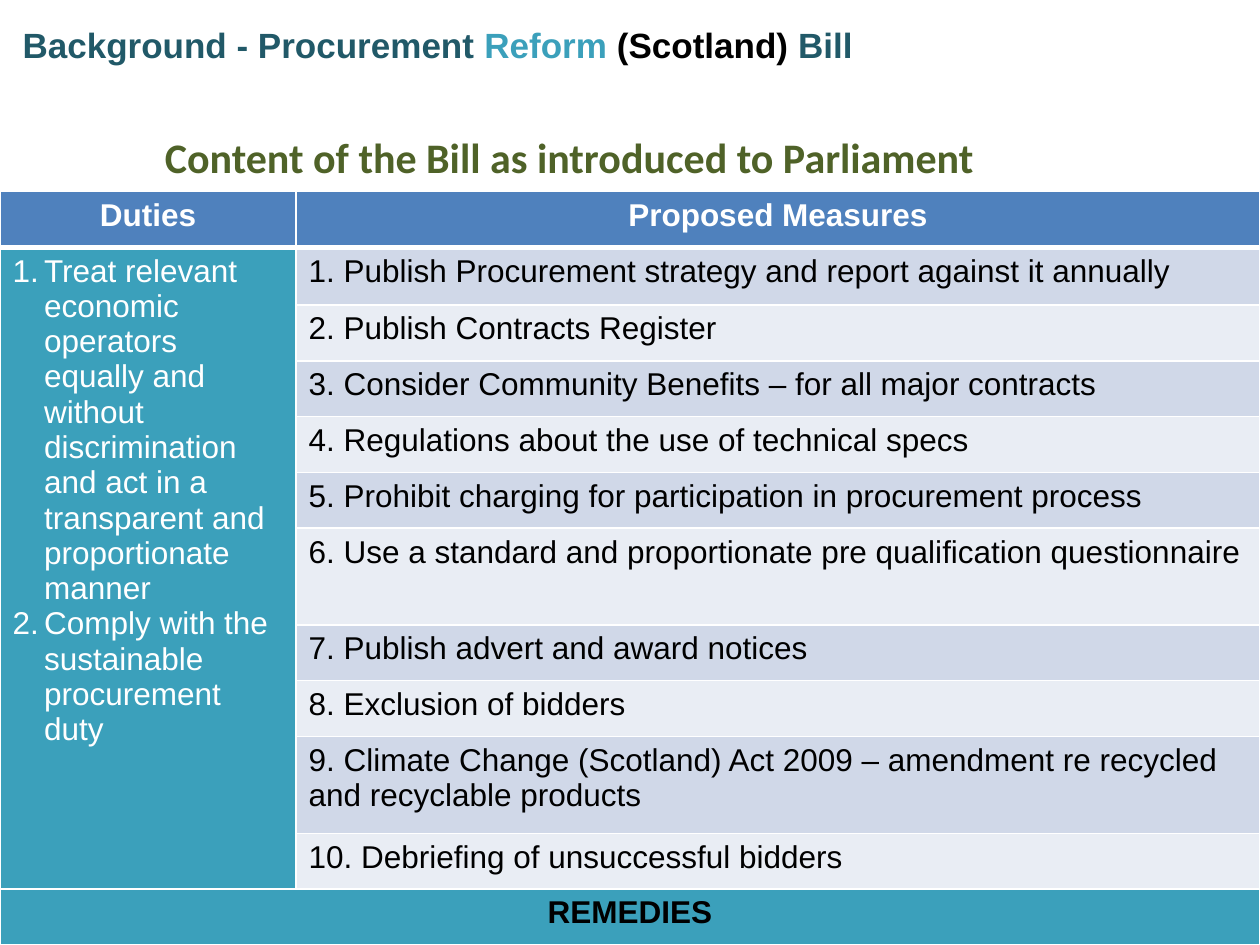
import pptx
import pptx.dml.color
import pptx.enum.text
import pptx.util
from lxml import etree

Pt = pptx.util.Pt
ALIGN = pptx.enum.text.PP_ALIGN
MIDDLE = pptx.enum.text.MSO_ANCHOR.MIDDLE
NS = "{http://schemas.openxmlformats.org/drawingml/2006/main}"

BLACK, WHITE, TEAL, DARK_TEAL = "000000", "FFFFFF", "3BA0BB", "215968"
HEADER_BLUE, BANDS = "4F81BD", ("D0D8E8", "E9EDF4")

HEADING = [
    ("Background - Procurement ", DARK_TEAL),
    ("Reform ", TEAL),
    ("(Scotland) ", BLACK),
    ("Bill", DARK_TEAL),
]
SUBJECT = "Content of the Bill as introduced to Parliament"
COLUMN_HEADS = ["Duties", "Proposed Measures"]
DUTIES = [
    "Treat relevant economic operators equally and without discrimination "
    "and act in a transparent and proportionate manner",
    "Comply with the sustainable procurement duty",
]
MEASURES = [
    "Publish Procurement strategy and report against it annually",
    "Publish Contracts Register",
    "Consider Community Benefits – for all major contracts",
    "Regulations about the use of technical specs",
    "Prohibit charging for participation in procurement process",
    "Use a standard and proportionate pre qualification questionnaire",
    "Publish advert and award notices",
    "Exclusion of bidders",
    "Climate Change (Scotland) Act 2009 – amendment re recycled and recyclable products",
    "Debriefing of unsuccessful bidders",
]
REMEDIES = "REMEDIES"

COLUMN_WIDTHS = (169.2, 550.8)
ROW_HEIGHT, FIRST_HEIGHT, TALL_HEIGHT = 31.9, 33, 55.3
TALL_MEASURES = (6, 9)


def rgb(color):
    return pptx.dml.color.RGBColor.from_string(color)


def write(paragraph, text, size=18, font="Arial", color=BLACK, bold=False, align=ALIGN.LEFT):
    paragraph.alignment = align
    run = paragraph.add_run()
    run.text = text
    run.font.size = Pt(size)
    run.font.name = font
    run.font.bold = bold
    run.font.color.rgb = rgb(color)


def number(paragraph):
    properties = paragraph._p.get_or_add_pPr()
    properties.set("marL", str(Pt(18)))
    properties.set("indent", str(-Pt(18)))
    etree.SubElement(properties, NS + "buFont", typeface="+mj-lt")
    etree.SubElement(properties, NS + "buAutoNum", type="arabicPeriod")


def style_cell(cell, color, bottom=1):
    properties = cell._tc.get_or_add_tcPr()
    for side, width in (("L", 1), ("R", 1), ("T", 1), ("B", bottom)):
        line = etree.SubElement(properties, NS + "ln" + side, w=str(Pt(width)))
        fill = etree.SubElement(line, NS + "solidFill")
        etree.SubElement(fill, NS + "srgbClr", val=WHITE)
    cell.fill.solid()
    cell.fill.fore_color.rgb = rgb(color)


def place(shape, left, top, width, height):
    shape.left, shape.top, shape.width, shape.height = map(Pt, (left, top, width, height))


def add_titles(slide):
    subject = slide.shapes.title
    place(subject, 1.4, 44.6, 648, 90)
    subject.text_frame.vertical_anchor = MIDDLE
    write(subject.text_frame.paragraphs[0], SUBJECT, size=24, font="Calibri",
          color="4F6228", bold=True, align=ALIGN.CENTER)

    heading = slide.shapes.add_textbox(Pt(5.8), Pt(5.8), Pt(655), Pt(39.6)).text_frame
    heading.word_wrap = True
    heading.vertical_anchor = MIDDLE
    for text, color in HEADING:
        write(heading.paragraphs[0], text, size=20, color=color, bold=True)


def add_measures_table(slide):
    heights = [ROW_HEIGHT] * (len(MEASURES) + 2)
    heights[1] = FIRST_HEIGHT
    for measure in TALL_MEASURES:
        heights[measure] = TALL_HEIGHT
    table = slide.shapes.add_table(
        len(heights), 2, Pt(0), Pt(109.4), Pt(sum(COLUMN_WIDTHS)), Pt(sum(heights))
    ).table
    for column, width in zip(table.columns, COLUMN_WIDTHS):
        column.width = Pt(width)
    for row, height in zip(table.rows, heights):
        row.height = Pt(height)

    last = len(heights) - 1
    table.cell(1, 0).merge(table.cell(last - 1, 0))
    table.cell(last, 0).merge(table.cell(last, 1))

    for column, text in enumerate(COLUMN_HEADS):
        cell = table.cell(0, column)
        style_cell(cell, HEADER_BLUE, bottom=3)
        write(cell.text_frame.paragraphs[0], text, color=WHITE, bold=True, align=ALIGN.CENTER)

    for row, text in enumerate(MEASURES, start=1):
        style_cell(table.cell(row, 0), TEAL)
        cell = table.cell(row, 1)
        style_cell(cell, BANDS[(row - 1) % 2])
        write(cell.text_frame.paragraphs[0], f"{row}. {text}")

    duties = table.cell(1, 0).text_frame
    for index, text in enumerate(DUTIES):
        paragraph = duties.add_paragraph() if index else duties.paragraphs[0]
        number(paragraph)
        write(paragraph, text, color=WHITE)

    for column in range(2):
        style_cell(table.cell(last, column), TEAL)
    write(table.cell(last, 0).text_frame.paragraphs[0], REMEDIES, bold=True, align=ALIGN.CENTER)


def main():
    deck = pptx.Presentation()
    deck.slide_width, deck.slide_height = Pt(720), Pt(540)
    slide = deck.slides.add_slide(deck.slide_layouts[5])
    add_titles(slide)
    add_measures_table(slide)
    deck.save("out.pptx")


if __name__ == "__main__":
    main()
